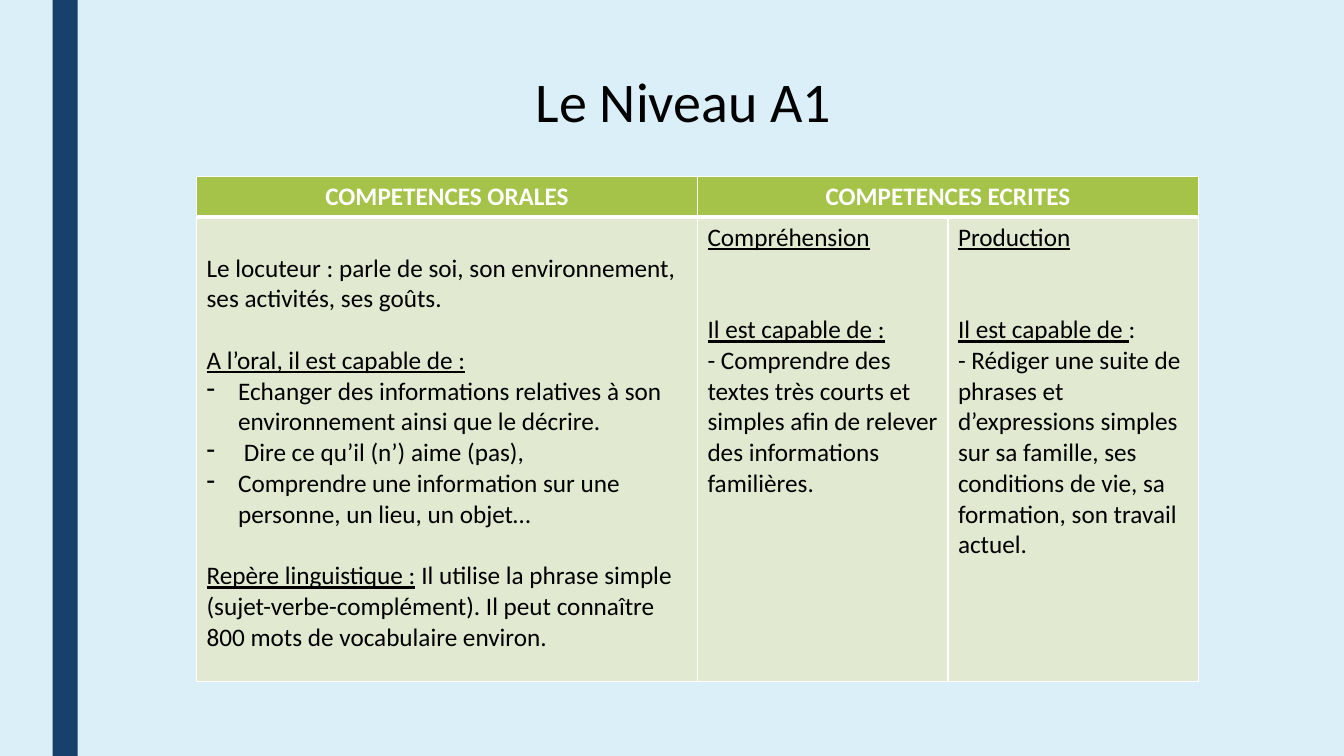
from pptx import Presentation
from pptx.dml.color import RGBColor
from pptx.enum.shapes import MSO_SHAPE
from pptx.enum.text import MSO_ANCHOR, MSO_AUTO_SIZE, PP_ALIGN
from pptx.oxml import parse_xml
from pptx.oxml.ns import nsdecls
from pptx.util import Pt

LINE = 22  # height of one 18 pt line


def rgb(value):
    return RGBColor.from_string(value)


def add_run(p, text, size, color, **formats):
    r = p.add_run()
    r.text = text
    r.font.color.rgb = rgb(color)
    for name, value in {"name": "Calibri", "size": Pt(size), **formats}.items():
        setattr(r.font, name, value)


prs = Presentation()
prs.slide_width, prs.slide_height = Pt(960), Pt(540)
s = prs.slides.add_slide(prs.slide_layouts[5])
s.background.fill.solid()
s.background.fill.fore_color.rgb = rgb("DBEFF9")

# Side bar
bar = s.shapes.add_shape(MSO_SHAPE.RECTANGLE, Pt(37.5), Pt(0), Pt(18), Pt(540))
bar.shadow.inherit = False
bar.fill.solid()
bar.fill.fore_color.rgb = rgb("17406D")
bar.line.fill.background()

# Title
title = s.shapes.title
box = {"left": 78.5, "top": 21.6, "width": 819.4, "height": 128}
for name, value in box.items():
    setattr(title, name, Pt(value))
tf = title.text_frame
frame = {"auto_size": MSO_AUTO_SIZE.NONE, "word_wrap": True,
         "vertical_anchor": MSO_ANCHOR.TOP, "margin_top": Pt(3.6 + LINE)}
for name, value in frame.items():
    setattr(tf, name, value)
p = tf.paragraphs[0]
p.alignment = PP_ALIGN.CENTER
add_run(p, "Le Niveau A1", 40, "000000")

# Table grid
widths, heights = [357.8, 178.95, 178.95], [29.2, 331.4]
table = s.shapes.add_table(2, 3, Pt(140.4), Pt(126), Pt(sum(widths)), Pt(sum(heights))).table
for column, width in zip(table.columns, widths):
    column.width = Pt(width)
for row, height in zip(table.rows, heights):
    row.height = Pt(height)

# Borders and fills
for i, fill in enumerate(["A5C249", "E1E9D0"]):
    for cell in table.rows[i].cells:
        tcPr = cell._tc.get_or_add_tcPr()
        for side in "LRTB":
            width = 3 if side == "BT"[i] else 1
            tcPr.append(parse_xml(
                f'<a:ln{side} {nsdecls("a")} w="{Pt(width)}"><a:solidFill>'
                f'<a:srgbClr val="FFFFFF"/></a:solidFill></a:ln{side}>'))
        cell.fill.solid()
        cell.fill.fore_color.rgb = rgb(fill)
table.cell(0, 1).merge(table.cell(0, 2))

# Headings
for j, text in enumerate(["COMPETENCES ORALES", "COMPETENCES ECRITES"]):
    p = table.cell(0, j).text_frame.paragraphs[0]
    p.alignment = PP_ALIGN.CENTER
    add_run(p, text, 18, "FFFFFF", bold=True)

# Body: (empty lines above, bulleted, underlined text, plain text)
body = [
    [(0, False, "", "Le locuteur : parle de soi, son environnement, ses activités, ses goûts."),
     (1, False, "A l’oral, il est capable de :", ""),
     (0, True, "", "Echanger des informations relatives à son environnement ainsi que le décrire."),
     (0, True, "", " Dire ce qu’il (n’) aime (pas),"),
     (0, True, "", "Comprendre une information sur une personne, un lieu, un objet…"),
     (1, False, "Repère linguistique :", " Il utilise la phrase simple (sujet-verbe-complément). "
      "Il peut connaître 800 mots de vocabulaire environ.")],
    [(0, False, "Compréhension", ""),
     (2, False, "Il est capable de :", ""),
     (0, False, "", "- Comprendre des textes très courts et simples afin de relever "
      "des informations familières.")],
    [(0, False, "Production", ""),
     (2, False, "Il est capable de ", ":"),
     (0, False, "", "- Rédiger une suite de phrases et d’expressions simples sur sa famille, "
      "ses conditions de vie, sa formation, son travail actuel.")],
]
table.cell(1, 0).margin_top = Pt(3.6 + LINE)
for j, paragraphs in enumerate(body):
    tf = table.cell(1, j).text_frame
    for k, (gap, bulleted, underlined, plain) in enumerate(paragraphs):
        p = tf.add_paragraph() if k else tf.paragraphs[0]
        if gap:
            p.space_before = Pt(gap * LINE)
        if bulleted:
            pPr = p._p.get_or_add_pPr()
            pPr.set("marL", str(Pt(22.5)))
            pPr.set("indent", str(-Pt(22.5)))
            pPr.append(parse_xml(f'<a:buChar {nsdecls("a")} char="-"/>'))
        for text, underline in [(underlined, True), (plain, False)]:
            if text:
                add_run(p, text, 18, "000000", bold=False, underline=underline)

prs.save("out.pptx")
